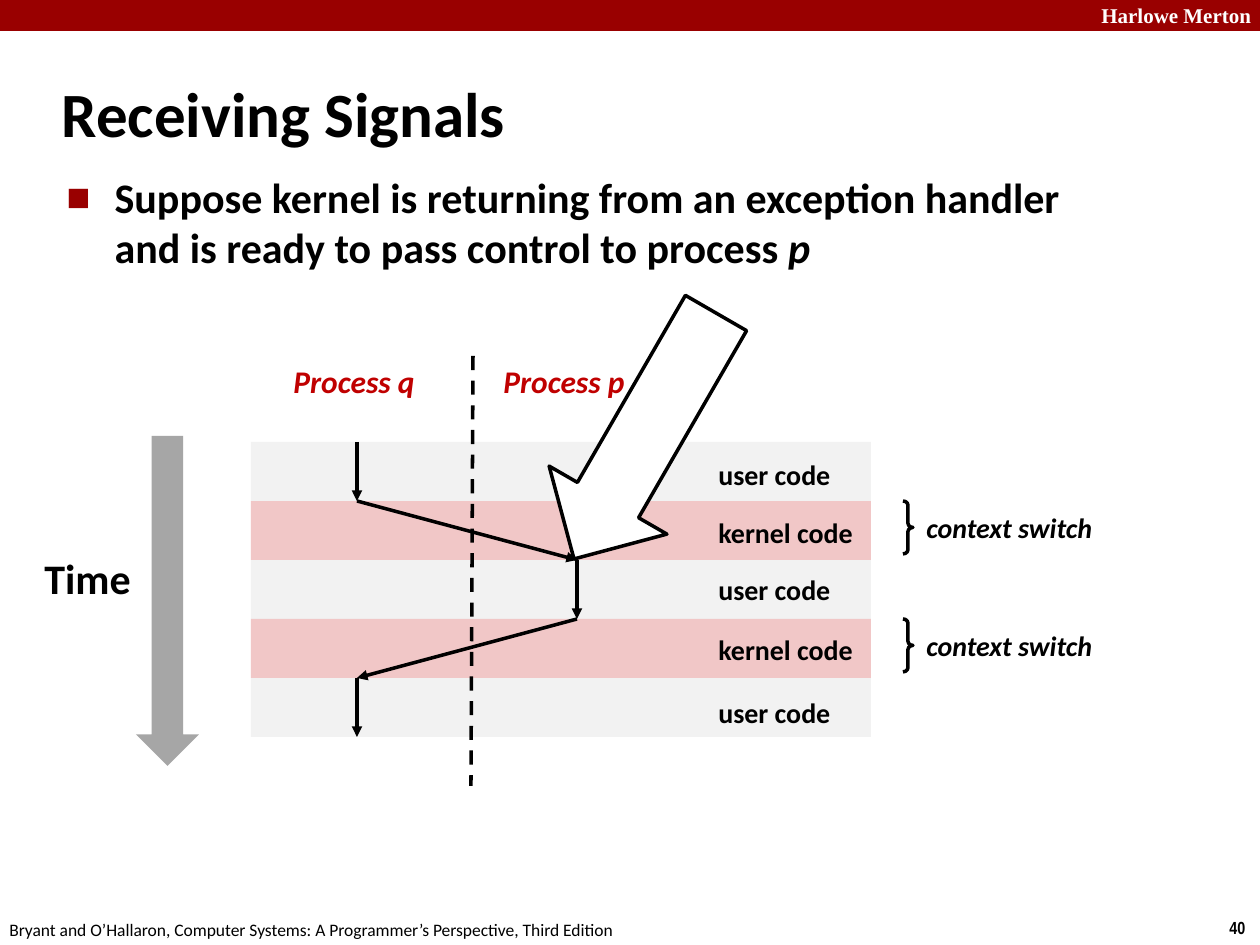
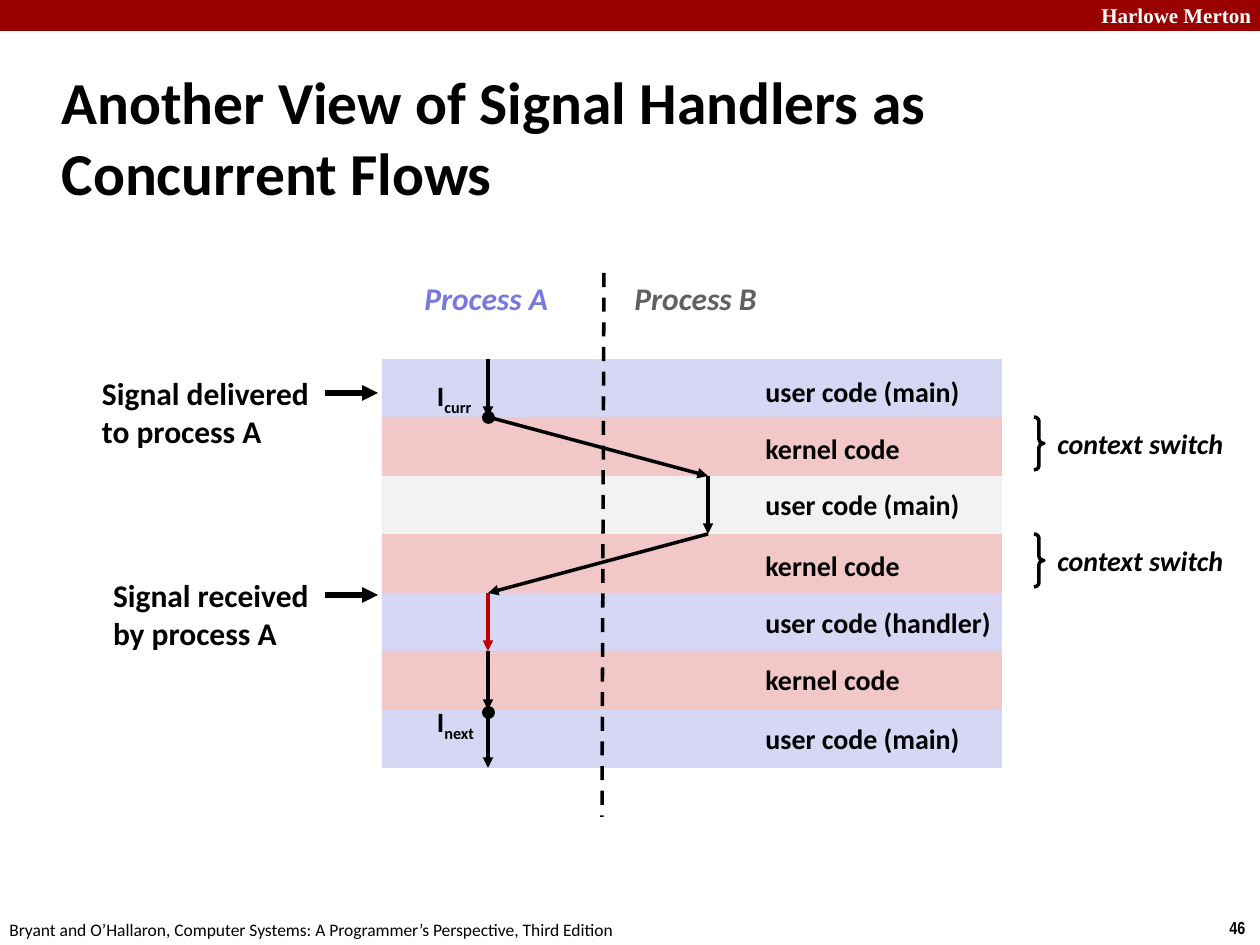
from dataclasses import dataclass
from itertools import pairwise

from lxml import etree
from pptx import Presentation
from pptx.dml.color import RGBColor
from pptx.enum import dml, shapes, text
from pptx.oxml import ns
from pptx.util import Emu, Pt

SCALE = 914400 / 126


@dataclass(frozen=True)
class Theme:
    face: str = "Calibri"
    serif: str = "Times New Roman"
    narrow: str = "Arial Narrow"
    ink: str = "000000"
    white: str = "FFFFFF"
    brand: str = "990000"
    red: str = "C00000"
    rose: str = "F1C7C7"
    mist: str = "F2F2F2"
    lilac: str = "D6D6F5"
    violet: str = "7878DE"
    slate: str = "606060"
    grey: str = "A6A6A6"
    head: int = 36
    long: int = 34
    body: int = 24
    name: int = 18
    label: int = 16
    mark: int = 12
    foot: int = 10


def px(*values):
    return [Emu(round(v * SCALE)) for v in values]


def rgb(code):
    return RGBColor.from_string(code)


def child(parent, tag, **attrs):
    return etree.SubElement(parent, ns.qn(tag), attrs)


class Deck:
    def __init__(self, theme):
        self.theme = theme
        self.show = Presentation()
        self.show.slide_width, self.show.slide_height = px(1260, 945)
        self.slide = None

    def page(self, layout, number):
        t = self.theme
        self.slide = self.show.slides.add_slide(self.show.slide_layouts[layout])
        self.shape(shapes.MSO_SHAPE.RECTANGLE, (0, 0, 1260, 31), t.brand)
        self.text((1089, -4, 180, 38), ["Harlowe Merton"], t.mark, t.white,
                  face=t.serif, wrap=True)
        self.text((1217, 911, 43, 34), [number], t.foot, face=t.narrow)
        self.text((-3, 913, 640, 34),
                  ["Bryant and O’Hallaron, Computer Systems: A Programmer’s Perspective, Third Edition"],
                  t.foot, bold=False)

    def place(self, item, box):
        item.left, item.top, item.width, item.height = px(*box)

    def run(self, para, words, size, color=None, face=None, bold=True, style=""):
        run = para.add_run()
        run.text = words
        font = run.font
        font.name = face or self.theme.face
        font.size = Pt(size)
        font.bold = bold
        font.color.rgb = rgb(color or self.theme.ink)
        if style == "italic":
            font.italic = True
        elif style == "sub":
            run._r.get_or_add_rPr().set("baseline", "-25000")

    def text(self, box, lines, size, color=None, inset=None, wrap=False, **look):
        item = self.slide.shapes.add_textbox(*px(*box))
        frame = item.text_frame
        frame.word_wrap = wrap
        frame.auto_size = text.MSO_AUTO_SIZE.SHAPE_TO_FIT_TEXT
        if inset is not None:
            side, = px(inset)
            frame.margin_left = frame.margin_right = side
            frame.margin_top = frame.margin_bottom = side
        for i, line in enumerate(lines):
            para = frame.add_paragraph() if i else frame.paragraphs[0]
            self.run(para, line, size, color, **look)
        return frame

    def title(self, words, top, size):
        item = self.slide.shapes.title
        self.place(item, (49, top, 1046, 105))
        frame = item.text_frame
        frame.auto_size = text.MSO_AUTO_SIZE.NONE
        frame.vertical_anchor = text.MSO_ANCHOR.MIDDLE
        para = frame.paragraphs[0]
        para.alignment = text.PP_ALIGN.LEFT
        self.run(para, words, size)

    def list(self, box, runs):
        item = self.slide.placeholders[1]
        self.place(item, box)
        frame = item.text_frame
        frame.auto_size = text.MSO_AUTO_SIZE.NONE
        para = frame.paragraphs[0]
        prop = para._p.get_or_add_pPr()
        indent, = px(48)
        prop.set("marL", str(indent))
        prop.set("indent", str(-indent))
        child(child(prop, "a:buClr"), "a:srgbClr", val=self.theme.brand)
        child(prop, "a:buSzPct", val="60000")
        child(prop, "a:buFont", typeface=self.theme.face)
        child(prop, "a:buChar", char="■")
        for words, style in runs:
            self.run(para, words, self.theme.body, style=style)

    def shape(self, kind, box, fill=None, line=None, adjust=(), turn=0):
        item = self.slide.shapes.add_shape(kind, *px(*box))
        item.shadow.inherit = False
        item.rotation = turn
        for i, value in enumerate(adjust):
            item.adjustments[i] = value
        if fill:
            item.fill.solid()
            item.fill.fore_color.rgb = rgb(fill)
        else:
            item.fill.background()
        if line:
            item.line.color.rgb = rgb(line)
            item.line.width = Pt(2)
        else:
            item.line.fill.background()

    def line(self, start, end, color=None, width=2, dash=False):
        item = self.slide.shapes.add_connector(
            shapes.MSO_CONNECTOR.STRAIGHT, *px(*start, *end))
        item.line.color.rgb = rgb(color or self.theme.ink)
        item.line.width = Pt(width)
        prop = item.element.spPr
        if dash:
            item.line.dash_style = dml.MSO_LINE.DASH
        else:
            child(prop.find(ns.qn("a:ln")), "a:tailEnd", type="triangle")
        child(prop, "a:effectLst")

    def brace(self, left, top):
        t = self.theme
        self.shape(shapes.MSO_SHAPE.RIGHT_BRACE, (left, top, 10, 53),
                   line=t.ink, adjust=(0.417, 0.5))
        self.text((left + 11, top + 3, 194, 46), ["context switch"],
                  t.label, style="italic")

    def flow(self, left, top, bottom, inset, names, rows, lanes, tints=None):
        t = self.theme
        count = len(rows)
        edges = [top + round((bottom - top) * i / count) for i in range(count + 1)]
        for (low, high), (_, _, fill, _) in zip(pairwise(edges), rows):
            self.shape(shapes.MSO_SHAPE.RECTANGLE, (left, low, 620, high - low), fill)
        for (name, color), shift in zip(names, (30, 240)):
            self.text((left + shift, top - 86, 150, 50), [name], t.name, color,
                      style="italic")
        self.line((left + 222, top - 86), (left + 220, bottom + 49), dash=True)
        for edge, (words, width, _, drop) in zip(edges, rows):
            self.text((left + inset, edge + drop, width, 46), [words], t.label)
        for i in (1, 3):
            self.brace(left + 652, edges[i])
        points = [(left + (106 if lane == "L" else 326), edge)
                  for lane, edge in zip(lanes, edges)]
        for i, (start, end) in enumerate(pairwise(points)):
            self.line(start, end, (tints or {}).get(i))

    def event(self, box, lines, level):
        self.text(box, lines, self.theme.name, inset=6)
        self.line((325, level), (378, level), width=3)

    def point(self, box, sub, level):
        t = self.theme
        frame = self.text(box, ["I"], t.label, inset=6)
        self.run(frame.paragraphs[0], sub, t.label, style="sub")
        self.shape(shapes.MSO_SHAPE.OVAL, (482, level - 6, 13, 13), t.ink)


def switch(deck):
    t = deck.theme
    deck.page(1, "40")
    deck.title("Receiving Signals", 60, t.head)
    deck.list((54, 165, 1089, 150), [
        ("Suppose kernel is returning from an exception handler and is ready to pass control to process ", ""),
        ("p", "italic"),
    ])
    user = ("user code", 139, t.mist)
    kernel = ("kernel code", 161, t.rose)
    deck.flow(251, 442, 737, 455,
              [("Process q", t.red), ("Process p", t.red)],
              [(*user, 9), (*kernel, 8), (*user, 6), (*kernel, 7), (*user, 11)],
              "LLRRLL")
    deck.text((32, 546, 112, 63), ["Time"], t.body)
    arrow = shapes.MSO_SHAPE.DOWN_ARROW
    deck.shape(arrow, (136, 436, 63, 330), t.grey)
    deck.shape(arrow, (577, 294, 136, 284), t.white, t.ink, (0.519, 0.5), 30)


def signal(deck):
    t = deck.theme
    deck.page(5, "46")
    deck.title("Another View of Signal Handlers as Concurrent Flows", 84, t.long)
    main = ("user code (main)", 222)
    kernel = ("kernel code", 161, t.rose)
    deck.flow(382, 359, 768, 371,
              [("Process A", t.violet), ("Process B", t.slate)],
              [(*main, t.lilac, 9), (*kernel, 8), (*main, t.mist, 5), (*kernel, 8),
               ("user code (handler)", 254, t.lilac, 6), (*kernel, 5), (*main, t.lilac, 5)],
              "LLRRLLLL", {4: t.red})
    deck.event((96, 368, 223, 89), ["Signal delivered", "to process A"], 393)
    deck.event((107, 570, 210, 89), ["Signal received", "by process A"], 595)
    deck.point((431, 373, 52, 46), "curr", 417)
    deck.point((431, 699, 55, 46), "next", 712)


def main():
    deck = Deck(Theme())
    switch(deck)
    signal(deck)
    deck.show.save("out.pptx")


if __name__ == "__main__":
    main()
